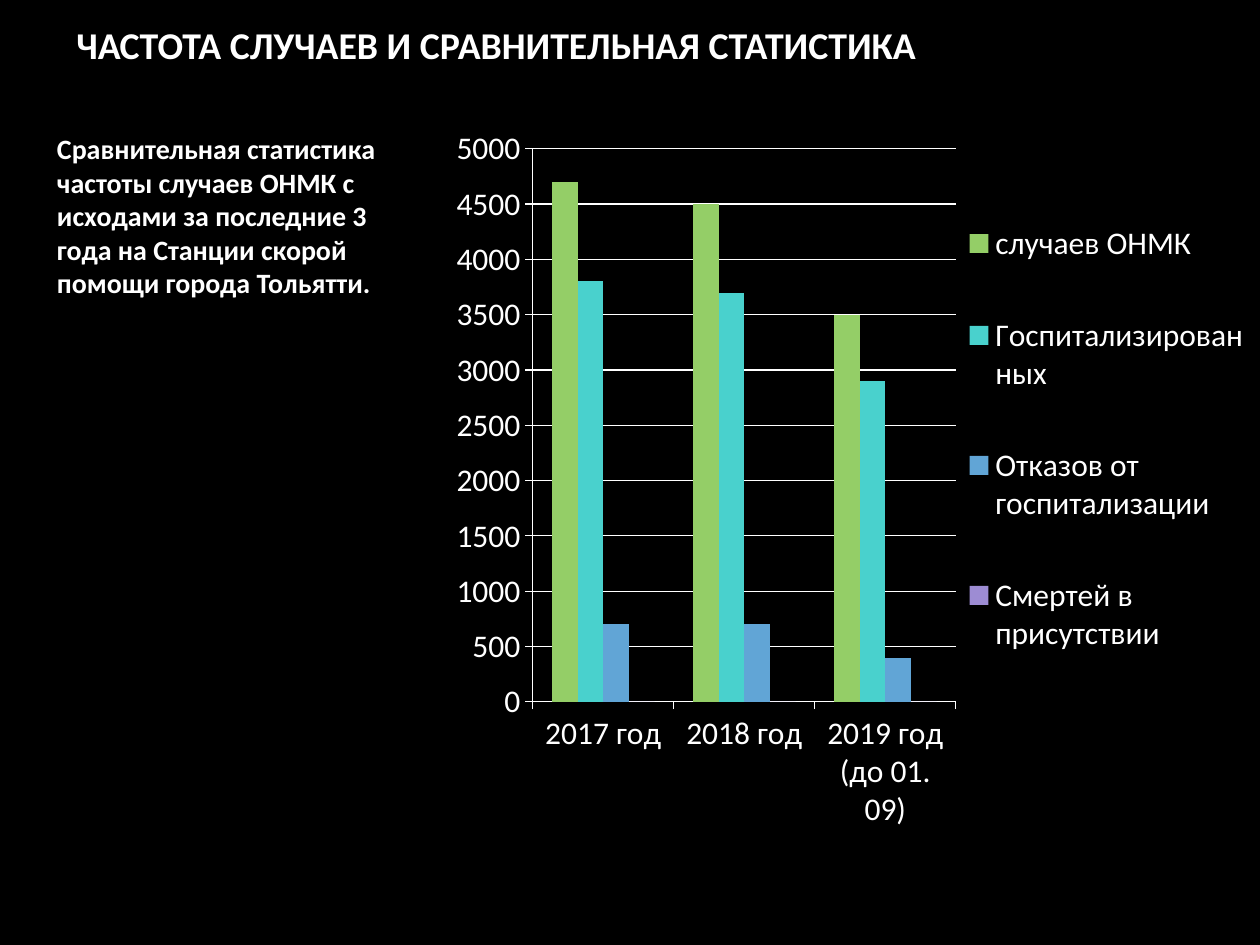
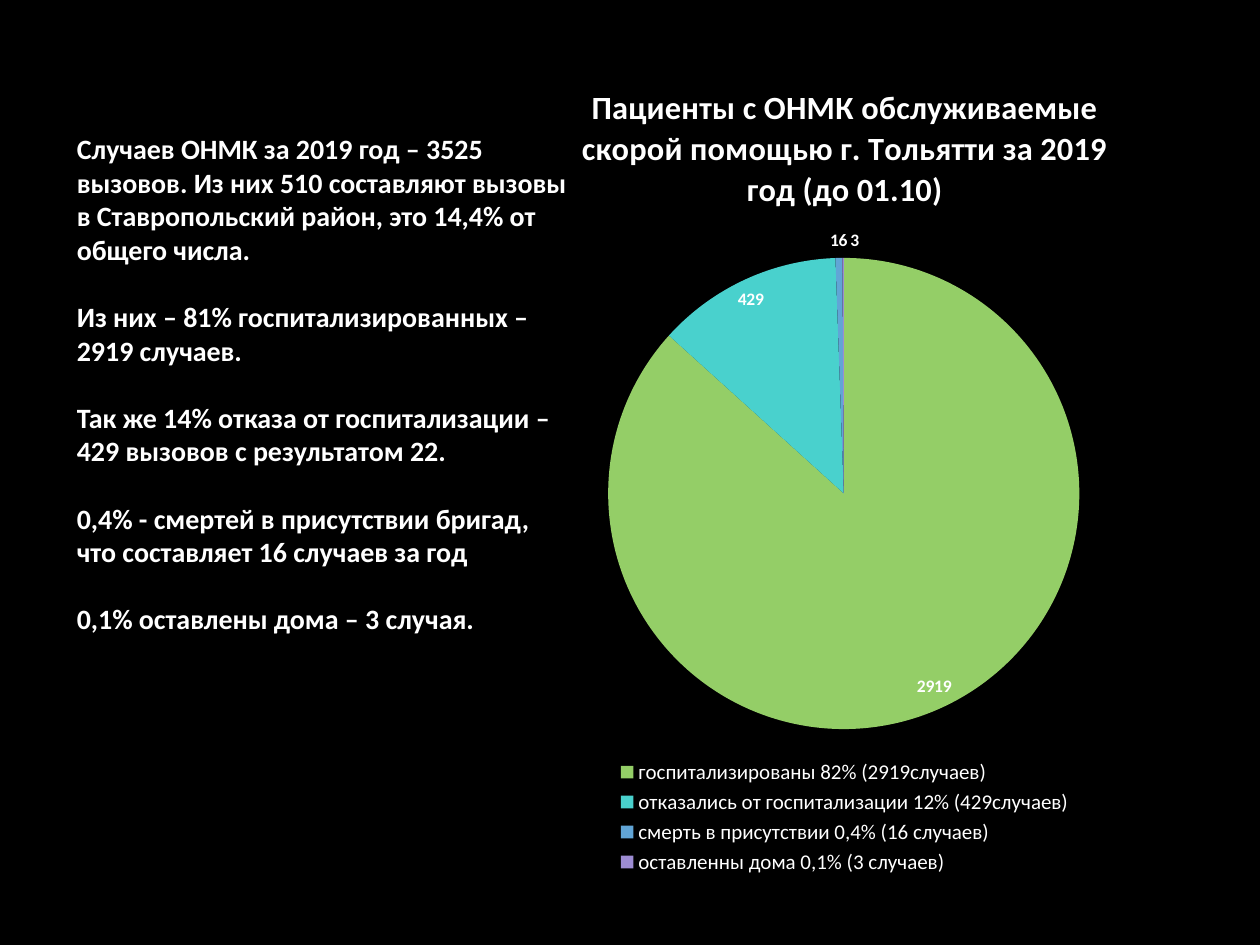
from lxml import etree
from pptx import Presentation
from pptx.chart.data import CategoryChartData
from pptx.dml.color import RGBColor
from pptx.enum.chart import XL_CHART_TYPE, XL_LABEL_POSITION, XL_LEGEND_POSITION, XL_TICK_MARK
from pptx.oxml.ns import qn
from pptx.util import Cm, Pt

FONT = "Calibri"
COLOURS = {
    "back": "000000",
    "text": "FFFFFF",
    "green": "94CE67",
    "teal": "49D1CD",
    "blue": "61A5D6",
    "violet": "9D8CD3",
}
SERIES_COLOURS = ("green", "teal", "blue", "violet")


def colour(name):
    return RGBColor.from_string(COLOURS[name])


def style_font(font, size, bold=False):
    font.name = FONT
    font.size = Pt(size)
    font.bold = bold
    font.color.rgb = colour("text")


def style_line(line):
    line.color.rgb = colour("text")
    line.width = Pt(0.75)


def paint(fill, name):
    fill.solid()
    fill.fore_color.rgb = colour(name)


def add_page(deck):
    page = deck.slides.add_slide(deck.slide_layouts[6])
    paint(page.background.fill, "back")
    return page


def add_text(page, box, paragraphs, size=16, gap=0, line_spacing=None):
    frame = page.shapes.add_textbox(*map(Cm, box)).text_frame
    frame.word_wrap = True
    for index, text in enumerate(paragraphs):
        para = frame.paragraphs[0] if index == 0 else frame.add_paragraph()
        if index:
            para.space_before = Pt(gap)
        if line_spacing:
            para.line_spacing = line_spacing
        span = para.add_run()
        span.text = text
        style_font(span.font, size, bold=True)


def manual_layout(chart_box, part_box, inner=False):
    """Layout of a chart part whose box is given in cm from the chart's corner."""
    layout = etree.Element(qn("c:layout"))
    manual = etree.SubElement(layout, qn("c:manualLayout"))
    settings = {"layoutTarget": "inner"} if inner else {}
    settings.update(xMode="edge", yMode="edge")
    width, height = chart_box[2:]
    for tag, length, whole in zip("xywh", part_box, (width, height) * 2):
        settings[tag] = length / whole
    for tag, value in settings.items():
        etree.SubElement(manual, qn(f"c:{tag}")).set("val", str(value))
    return layout


def place_plot(chart, chart_box, plot_box):
    area = chart._chartSpace.chart.plotArea
    for old in area.findall(qn("c:layout")):
        area.remove(old)
    area.insert(0, manual_layout(chart_box, plot_box, inner=True))


def place_legend(chart, chart_box, legend_box):
    legend = chart.legend._element
    for old in legend.findall(qn("c:layout")):
        legend.remove(old)
    position = legend.find(qn("c:legendPos"))
    position.addnext(manual_layout(chart_box, legend_box))


def add_chart(page, box, kind, categories, series, size, legend_place, legend_size):
    data = CategoryChartData()
    data.categories = categories
    for name, values in series:
        data.add_series(name, values)
    chart = page.shapes.add_chart(kind, *map(Cm, box), data).chart
    style_font(chart.font, size)
    chart.has_legend = True
    chart.legend.position = legend_place
    chart.legend.include_in_layout = False
    style_font(chart.legend.font, legend_size)
    return chart


def add_case_columns(page, box):
    chart = add_chart(
        page, box, XL_CHART_TYPE.COLUMN_CLUSTERED,
        ("2017 год", "2018 год", "2019 год (до 01. 09)"),
        (
            ("случаев ОНМК", (4700, 4500, 3500)),
            ("Госпитализированных", (3800, 3700, 2900)),
            ("Отказов от госпитализации", (700, 700, 400)),
            ("Смертей в присутствии", (0, 0, 0)),
        ),
        18, XL_LEGEND_POSITION.RIGHT, 18,
    )
    chart.has_title = False
    place_plot(chart, box, (1.88, 0.66, 8.53, 11.15))
    place_legend(chart, box, (10.8, 1.1, 5.74, 10.8))

    # Columns
    plot = chart.plots[0]
    plot.vary_by_categories = False
    plot.gap_width = 150
    for series, name in zip(plot.series, SERIES_COLOURS):
        paint(series.format.fill, name)

    # Axes
    for axis in (chart.category_axis, chart.value_axis):
        axis.major_tick_mark = XL_TICK_MARK.OUTSIDE
        style_line(axis.format.line)
    scale = chart.value_axis
    scale.minimum_scale, scale.maximum_scale, scale.major_unit = 0, 5000, 500
    scale.has_major_gridlines = True
    style_line(scale.major_gridlines.format.line)


def add_outcome_pie(page, box):
    chart = add_chart(
        page, box, XL_CHART_TYPE.PIE,
        (
            "госпитализированы 82% (2919случаев)",
            "отказались от госпитализации 12% (429случаев)",
            "смерть в присутствии 0,4% (16 случаев)",
            "оставленны дома 0,1% (3 случаев)",
        ),
        (("Series 1", (2919, 429, 16, 3)),),
        10, XL_LEGEND_POSITION.BOTTOM, 12,
    )
    place_plot(chart, box, (2.56, 4.08, 9.5, 9.5))

    # Chart title
    chart.has_title = True
    chart.chart_title.include_in_layout = False
    span = chart.chart_title.text_frame.paragraphs[0].add_run()
    span.text = "Пациенты с ОНМК обслуживаемые скорой помощью г. Тольятти за 2019 год (до 01.10)"
    style_font(span.font, 18.5, bold=True)

    # Slices and their values
    plot = chart.plots[0]
    plot.vary_by_categories = True
    series = plot.series[0]
    style_line(series.format.line)
    for index, name in enumerate(SERIES_COLOURS):
        paint(series.points[index].format.fill, name)
    plot.has_data_labels = True
    labels = plot.data_labels
    labels.show_value = True
    labels.position = XL_LABEL_POSITION.BEST_FIT
    style_font(labels.font, 10, bold=True)


def build_yearly_page(deck):
    page = add_page(deck)
    add_case_columns(page, (8.86, 2.34, 16.54, 14.68))
    add_text(page, (0.9, 2.53, 7.8, 4.27), (
        "Сравнительная статистика частоты случаев ОНМК с исходами "
        "за последние 3 года на Станции скорой помощи города Тольятти.",
    ))
    add_text(page, (1.29, 0.49, 17.63, 1.19),
             ("ЧАСТОТА СЛУЧАЕВ И СРАВНИТЕЛЬНАЯ СТАТИСТИКА",), size=21.6, line_spacing=0.8)


def build_outcome_page(deck):
    page = add_page(deck)
    add_outcome_pie(page, (9.7, 1.12, 14.66, 16.61))
    add_text(page, (1.3, 2.53, 10.39, 11.89), (
        "Случаев ОНМК за 2019 год – 3525 вызовов. Из них 510 составляют вызовы "
        "в Ставропольский район, это 14,4% от общего числа.",
        "Из них – 81% госпитализированных –2919 случаев.",
        "Так же 14% отказа от госпитализации – 429 вызовов с результатом 22.",
        "0,4% - смертей в присутствии бригад, что составляет 16 случаев за год",
        "0,1% оставлены дома – 3 случая.",
    ), gap=19.2)


def main():
    deck = Presentation()
    deck.slide_width, deck.slide_height = Cm(25.4), Cm(19.05)
    build_yearly_page(deck)
    build_outcome_page(deck)
    deck.save("out.pptx")


if __name__ == "__main__":
    main()
